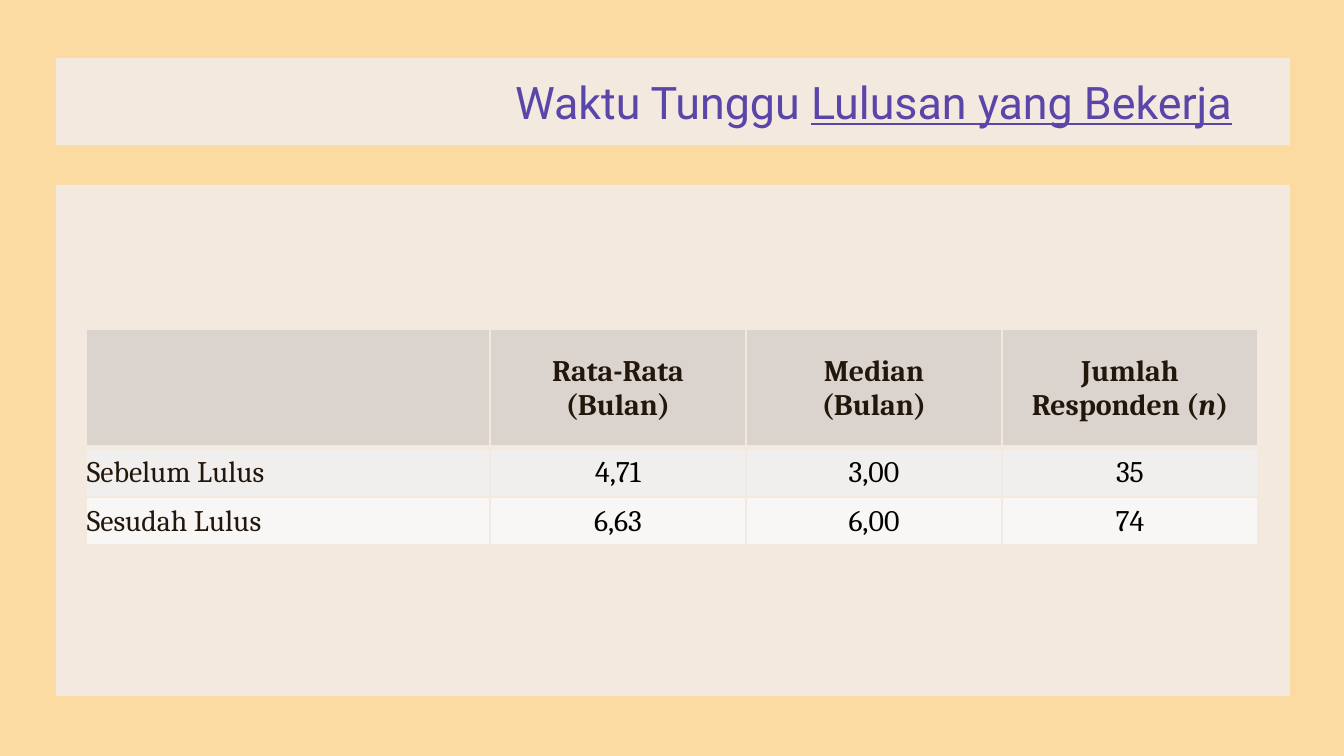
from lxml import etree
from pptx import Presentation
from pptx import util as u
from pptx.dml.color import RGBColor
from pptx.enum import shapes, text
from pptx.oxml import ns

PX = 914400 / 134.4
MIDDLE = text.MSO_ANCHOR.MIDDLE
LEFT, CENTER, RIGHT = text.PP_ALIGN.LEFT, text.PP_ALIGN.CENTER, text.PP_ALIGN.RIGHT


def px(*lengths):
    return [u.Emu(round(n * PX)) for n in lengths]


def color(hex_value):
    return RGBColor.from_string(hex_value)


class Deck:
    backdrop, panel_fill, title_ink = "FCDBA2", "F4E9DF", "5A45A8"
    ink, figure_ink = "23170C", "000000"
    row_fills = ["DBD4CE", "F1EFED", "F8F7F6"]
    title_font, table_font = "Roboto", "Cambria"

    def __init__(self, width, height):
        self.prs = Presentation()
        self.prs.slide_width, self.prs.slide_height = px(width, height)
        self.slide = self.prs.slides.add_slide(self.prs.slide_layouts[6])
        self.slide.background.fill.solid()
        self.slide.background.fill.fore_color.rgb = color(self.backdrop)

    def panel(self, *box):
        panel = self.slide.shapes.add_shape(shapes.MSO_SHAPE.RECTANGLE, *px(*box))
        panel.shadow.inherit = False
        panel.fill.solid()
        panel.fill.fore_color.rgb = color(self.panel_fill)
        panel.line.fill.background()

    def style(self, paragraph, font, size, ink, align, bold=False):
        paragraph.alignment = align
        paragraph.font.name = font
        paragraph.font.size = u.Pt(size)
        paragraph.font.bold = bold
        paragraph.font.color.rgb = color(ink)

    def title(self, box, plain, underlined):
        frame = self.slide.shapes.add_textbox(*px(*box)).text_frame
        frame.word_wrap = True
        frame.vertical_anchor = MIDDLE
        frame.margin_left, frame.margin_top, frame.margin_right, frame.margin_bottom = px(13, 13, 13, 13)
        heading = frame.paragraphs[0]
        self.style(heading, self.title_font, 24, self.title_ink, RIGHT)
        heading.add_run().text = plain
        emphasis = heading.add_run()
        emphasis.text = underlined
        emphasis.font.underline = True

    def borders(self, cell, widths):
        properties = cell._tc.get_or_add_tcPr()
        for side, width in zip("LRTB", widths):
            line = etree.SubElement(properties, ns.qn(f"a:ln{side}"), w=str(u.Pt(width)))
            fill = etree.SubElement(line, ns.qn("a:solidFill"))
            etree.SubElement(fill, ns.qn("a:srgbClr"), val=self.panel_fill)

    def cell(self, cell, paragraphs, row, column):
        header = row == 0
        self.borders(cell, (1, 1, 3 if row == 1 else 1, 3 if header else 1))
        cell.fill.solid()
        cell.fill.fore_color.rgb = color(self.row_fills[row])
        cell.vertical_anchor = MIDDLE
        margins = (13, 7, 13, 7) if header else (1, 1, 1, 0)
        cell.margin_left, cell.margin_top, cell.margin_right, cell.margin_bottom = px(*margins)
        frame = cell.text_frame
        for index, runs in enumerate(paragraphs):
            paragraph = frame.add_paragraph() if index else frame.paragraphs[0]
            label = header or column == 0
            self.style(paragraph, self.table_font, 16, self.ink if label else self.figure_ink,
                       CENTER if header or column else LEFT, header)
            for words, italic in runs:
                run = paragraph.add_run()
                run.text = words
                if italic:
                    run.font.italic = True

    def table(self, left, top, widths, heights, rows):
        box = px(left, top, sum(widths), sum(heights))
        table = self.slide.shapes.add_table(len(heights), len(widths), *box).table
        table.first_row = table.horz_banding = False
        for column, width in zip(table.columns, px(*widths)):
            column.width = width
        for row, height in zip(table.rows, px(*heights)):
            row.height = height
        for r, contents in enumerate(rows):
            for c, paragraphs in enumerate(contents):
                self.cell(table.cell(r, c), paragraphs, r, c)


def lines(*words):
    return [[(line, False)] for line in words]


def main():
    deck = Deck(1344, 756)
    deck.panel(56, 58, 1234, 87)
    deck.panel(56, 185, 1234, 511)
    deck.title((74, 58, 1171, 87), "Waktu Tunggu ", "Lulusan yang Bekerja")

    respondents = [[("Jumlah Responden (", False), ("n", True), (")", False)]]
    header = [[], lines("Rata-Rata", "(Bulan)"), lines("Median", "(Bulan)"), respondents]
    waiting_times = [
        ("Sebelum Lulus", "4,71", "3,00", "35"),
        ("Sesudah Lulus", "6,63", "6,00", "74"),
    ]
    body = [[lines(value) for value in row] for row in waiting_times]
    deck.table(86, 329, [404] + [256] * 3, [119, 49, 48], [header] + body)
    deck.prs.save("out.pptx")


if __name__ == "__main__":
    main()
